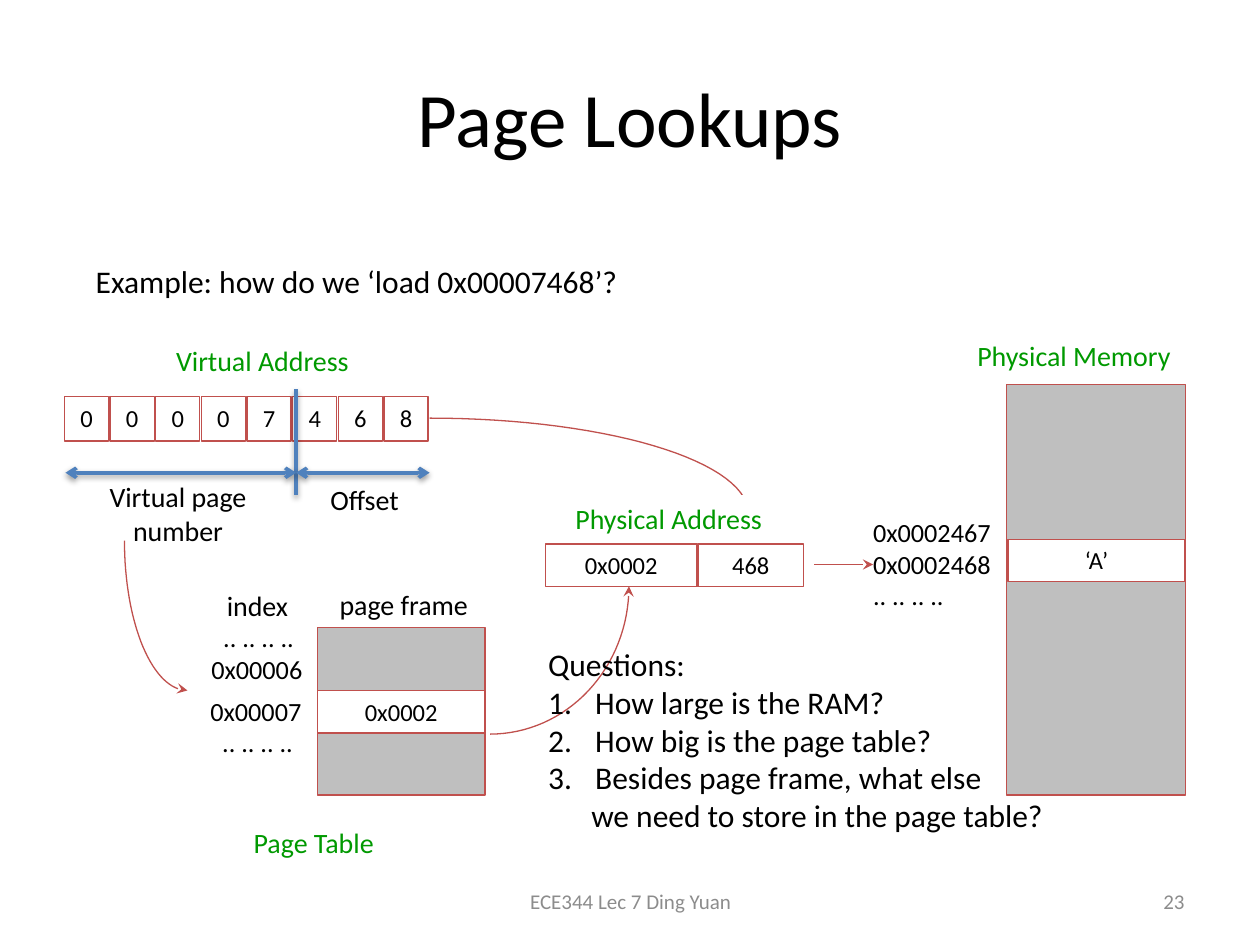
import math

from lxml import etree
from pptx import Presentation
from pptx.dml.color import RGBColor
from pptx.enum.shapes import MSO_CONNECTOR, MSO_SHAPE
from pptx.enum.text import MSO_ANCHOR, PP_ALIGN
from pptx.oxml.ns import qn
from pptx.util import Cm, Pt

RECT, STRAIGHT = MSO_SHAPE.RECTANGLE, MSO_CONNECTOR.STRAIGHT
LEFT, CENTER, RIGHT = PP_ALIGN.LEFT, PP_ALIGN.CENTER, PP_ALIGN.RIGHT
TOP, MIDDLE = MSO_ANCHOR.TOP, MSO_ANCHOR.MIDDLE
COLORS = {"black": "000000", "white": "FFFFFF", "gray": "BFBFBF", "footer": "8C8C8C",
          "red": "C0504D", "blue": "4F81BD", "green": "009900"}
COLORS = {name: RGBColor.from_string(value) for name, value in COLORS.items()}

prs = Presentation()
prs.slide_width, prs.slide_height = Cm(25.4), Cm(19.05)
s = prs.slides.add_slide(prs.slide_layouts[5])


def write(sp, lines, size=14, color="black", align=CENTER, anchor=TOP):
    """Fill a shape with one paragraph per line."""
    tf = sp.text_frame
    tf.word_wrap = True
    tf.vertical_anchor = anchor
    tf.text = "\n".join(lines)
    for p in tf.paragraphs:
        p.alignment = align
        font = {"name": "Calibri", "size": Pt(size)}
        for r in p.runs:
            for key, value in font.items():
                setattr(r.font, key, value)
            r.font.color.rgb = COLORS[color]
    return tf


def style_line(sp, color, width, head=None, tail=None, shadow=False):
    """Set the stroke, its arrowheads and either a soft shadow or none."""
    sp.line.color.rgb = COLORS[color]
    sp.line.width = Pt(width)
    props = sp._element.spPr
    ln = props.find(qn("a:ln"))
    for tag, kind in (("a:headEnd", head), ("a:tailEnd", tail)):
        if kind:
            etree.SubElement(ln, qn(tag), type=kind)
    effects = etree.SubElement(props, qn("a:effectLst"))
    if shadow:
        shade = etree.SubElement(effects, qn("a:outerShdw"), blurRad="40000", dist="20000",
                                 dir="5400000", rotWithShape="0")
        black = etree.SubElement(shade, qn("a:srgbClr"), val="000000")
        etree.SubElement(black, qn("a:alpha"), val="38000")


# Title
title = s.shapes.title
for key, value in {"left": Cm(1.27), "top": Cm(0.76), "width": Cm(22.86), "height": Cm(3.18)}.items():
    setattr(title, key, value)
write(title, ["Page Lookups"], size=44, anchor=MIDDLE)

# Memory, page table and address boxes; the address digits share one pitch
boxes = [
    (20.29, 7.75, 3.61, 8.28, "gray", ""),
    (20.32, 10.87, 3.57, 0.86, "white", "‘A’"),
    (6.4, 12.65, 3.38, 3.38, "gray", ""),
    (6.4, 13.92, 3.38, 0.86, "white", "0x0002"),
    (11, 10.97, 3.05, 0.86, "white", "0x0002"),
    (14.07, 10.97, 2.13, 0.86, "white", "468"),
]
boxes += [(1.3 + 0.92 * i, 8, 0.89, 0.89, "white", digit) for i, digit in enumerate("00007468")]
for x, y, w, h, fill, text in boxes:
    sp = s.shapes.add_shape(RECT, Cm(x), Cm(y), Cm(w), Cm(h))
    sp.fill.solid()
    sp.fill.fore_color.rgb = COLORS[fill]
    style_line(sp, "red", 0.75)
    if text:
        write(sp, [text])

# Elliptical arcs: centre, radii, start and end angle in degrees, arrowhead
arcs = [
    (8.66, 10.36, 6.43, 1.93, -90, 5, None),
    (3.78, 10.9, 1.27, 3.02, 180, 90, "stealth"),
    (9.88, 11.82, 2.8, 2.98, 90, 0, "stealth"),
]
STEPS = 32
for cx, cy, rx, ry, start, end, tail in arcs:
    angles = [math.radians(start + (end - start) * i / STEPS) for i in range(STEPS + 1)]
    points = [(Cm(cx + rx * math.cos(a)), Cm(cy + ry * math.sin(a))) for a in angles]
    curve = s.shapes.build_freeform(*points[0])
    curve.add_line_segments(points[1:], close=False)
    sp = curve.convert_to_shape()
    sp.fill.background()
    style_line(sp, "red", 0.75, tail=tail)

# Straight lines and arrows
thin = {"color": "red", "width": 0.75, "tail": "stealth"}
divider = {"color": "blue", "width": 2, "shadow": True}
span = {**divider, "head": "arrow", "tail": "arrow"}
for x1, y1, x2, y2, fmt in [
    (16.41, 11.38, 17.6, 11.38, thin),
    (5.97, 7.85, 5.97, 9.98, divider),
    (1.32, 9.53, 5.97, 9.53, span),
    (5.97, 9.53, 8.66, 9.53, span),
]:
    line = s.shapes.add_connector(STRAIGHT, Cm(x1), Cm(y1), Cm(x2), Cm(y2))
    style_line(line, **fmt)

# Green headings on a white ground
for x, y, w, text, align in [
    (3.3, 6.81, 4.65, "Virtual Address", LEFT),
    (4.42, 16.51, 3.81, "Page Table", CENTER),
    (11.35, 9.98, 4.65, "Physical Address", LEFT),
    (18.97, 6.71, 5.36, "Physical Memory", CENTER),
]:
    sp = s.shapes.add_textbox(Cm(x), Cm(y), Cm(w), Cm(0.94))
    sp.fill.solid()
    sp.fill.fore_color.rgb = COLORS["white"]
    write(sp, [text], size=16, color="green", align=align)

# Plain labels
DOTS = ".. .. .. .."
caption = {"size": 16}
listing = {"size": 15, "align": LEFT}
body = {"size": 18, "align": LEFT}
footer = {"size": 12, "color": "footer", "anchor": MIDDLE}
questions = ["Questions:", "How large is the RAM?", "How big is the page table?",
             "Besides page frame, what else", "we need to store in the page table?"]
for x, y, w, h, lines, fmt in [
    (1.85, 9.55, 3.48, 1.63, ["Virtual page", "number"], caption),
    (5.61, 9.6, 3.48, 0.94, ["Offset"], caption),
    (3.45, 11.73, 3.48, 0.94, ["index"], caption),
    (6.4, 11.71, 3.48, 0.94, ["page frame"], caption),
    (4.01, 12.4, 2.41, 1.55, [DOTS, "0x00006"], listing),
    (3.99, 13.89, 2.41, 1.55, ["0x00007", DOTS], listing),
    (17.35, 10.29, 2.97, 2.18, ["0x0002467", "0x0002468", DOTS], listing),
    (1.68, 5.16, 11.63, 1.02, ["Example: how do we ‘load 0x00007468’?"], body),
    (10.8, 12.88, 10.72, 4.11, questions, body),
    (8.69, 17.65, 8.05, 1.02, ["ECE344 Lec 7 Ding Yuan"], footer),
    (18.21, 17.65, 5.92, 1.02, ["23"], {**footer, "align": RIGHT}),
]:
    sp = s.shapes.add_textbox(Cm(x), Cm(y), Cm(w), Cm(h))
    tf = write(sp, lines, **fmt)
    for i, p in enumerate(tf.paragraphs):
        props = p._p.get_or_add_pPr()
        if lines is questions and 1 <= i <= 3:
            props.set("marL", str(Cm(0.95)))
            props.set("indent", str(-Cm(0.95)))
            etree.SubElement(props, qn("a:buAutoNum"), type="arabicPeriod")
        elif lines is questions and i == 4:
            props.set("marL", str(Cm(0.87)))
        elif p.text == DOTS and len(lines) == 2:
            props.set("marL", str(Cm(0.24)))

prs.save("out.pptx")
